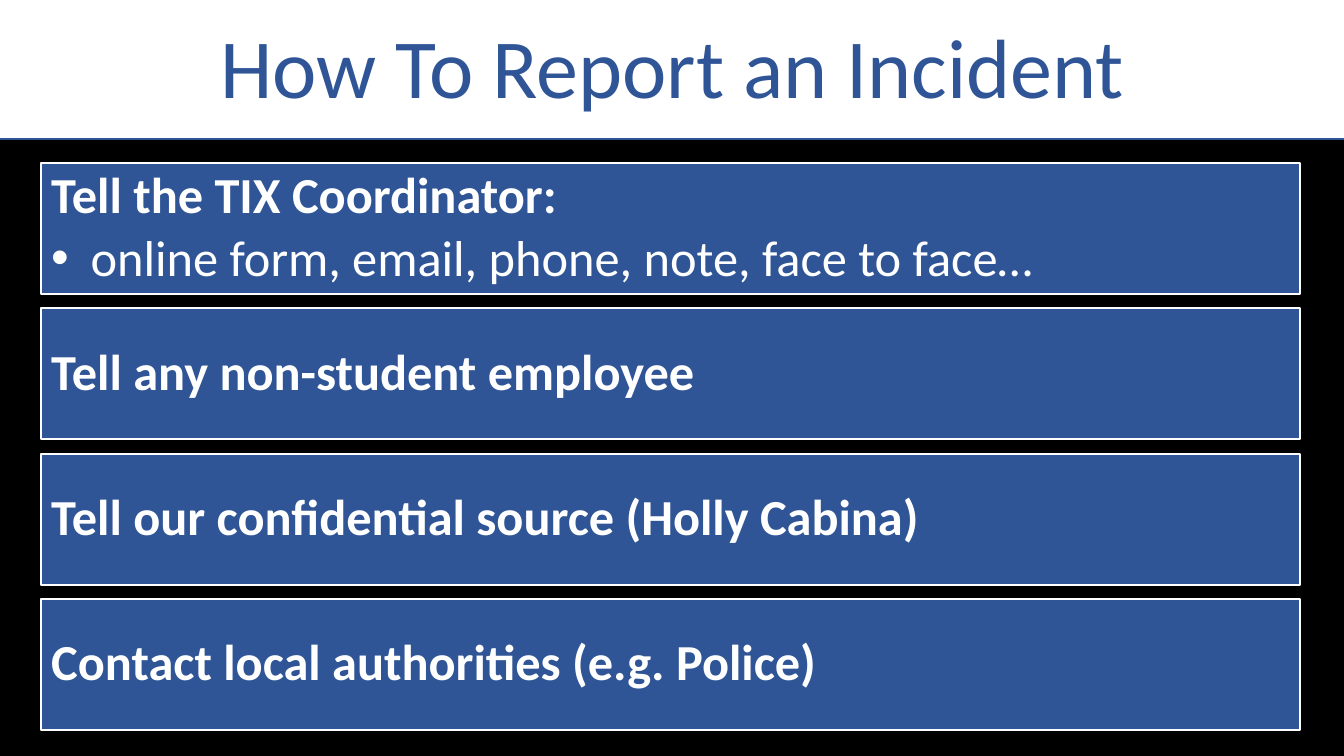
from dataclasses import dataclass

from lxml.etree import SubElement
from pptx import Presentation
from pptx.dml.color import RGBColor
from pptx.enum.shapes import MSO_SHAPE
from pptx.enum.text import MSO_ANCHOR, MSO_AUTO_SIZE, PP_ALIGN
from pptx.oxml.ns import qn
from pptx.util import Inches, Pt


@dataclass(frozen=True)
class Theme:
    font: str = "Calibri"
    black: RGBColor = RGBColor(0, 0, 0)
    white: RGBColor = RGBColor(255, 255, 255)
    blue: RGBColor = RGBColor(0x2F, 0x55, 0x97)
    title_size: int = 60
    body_size: int = 36
    banner_line: float = 1.75
    panel_line: float = 1.5


THEME = Theme()

# Grid, in inches: one column of equal rows
PAGE_WIDTH, PAGE_HEIGHT = 13.33, 7.5
PANEL_LEFT, PANEL_TOP = 0.41, 1.62
PANEL_WIDTH, PANEL_HEIGHT = 12.48, 1.3
ROW_PITCH = 1.44
BULLET_INDENT = 0.39

# Each option: heading, details
OPTIONS = [
    ("Tell the TIX Coordinator:", ["online form, email, phone, note, face to face…"]),
    ("Tell any non-student employee", []),
    ("Tell our confidential source (Holly Cabina)", []),
    ("Contact local authorities (e.g. Police)", []),
]


def add_block(page, left, top, width, height, fill, line, line_width):
    block = page.shapes.add_shape(
        MSO_SHAPE.RECTANGLE, Inches(left), Inches(top), Inches(width), Inches(height))
    block.shadow.inherit = False
    block.fill.solid()
    block.fill.fore_color.rgb = fill
    block.line.color.rgb = line
    block.line.width = Pt(line_width)
    return block


def format_para(para, size, color, bold=False, align=PP_ALIGN.LEFT, space_after=0):
    para.alignment = align
    para.line_spacing = 0.9
    para.space_after = Pt(space_after)
    for span in para.runs:
        span.font.name = THEME.font
        span.font.size = Pt(size)
        span.font.bold = bold
        span.font.color.rgb = color


def add_bullet(para):
    properties = para._p.get_or_add_pPr()
    indent = Inches(BULLET_INDENT)
    properties.set("marL", str(indent))
    properties.set("indent", str(-indent))
    SubElement(properties, qn("a:buFont"), typeface="Arial")
    SubElement(properties, qn("a:buChar"), char="•")


def add_title(page, text):
    title = page.shapes.title
    title.left, title.top = Inches(0.92), Inches(0.4)
    title.width, title.height = Inches(11.5), Inches(0.62)
    frame = title.text_frame
    frame.text = text
    frame.word_wrap = True
    frame.auto_size = MSO_AUTO_SIZE.NONE
    frame.vertical_anchor = MSO_ANCHOR.MIDDLE
    format_para(frame.paragraphs[0], THEME.title_size, THEME.blue, align=PP_ALIGN.CENTER)

    # White banner behind the title, bleeding off the page on three sides
    banner = add_block(page, -0.13, -0.14, PAGE_WIDTH + 0.26, 1.52,
                       THEME.white, THEME.blue, THEME.banner_line)
    title.element.addprevious(banner.element)


def add_option(page, row, heading, details):
    panel = add_block(page, PANEL_LEFT, PANEL_TOP + row * ROW_PITCH, PANEL_WIDTH,
                      PANEL_HEIGHT, THEME.blue, THEME.white, THEME.panel_line)
    frame = panel.text_frame
    frame.text = "\n".join([heading, *details])
    frame.word_wrap = True
    frame.vertical_anchor = MSO_ANCHOR.MIDDLE
    space_after = 6 if details else 12
    for index, para in enumerate(frame.paragraphs):
        format_para(para, THEME.body_size, THEME.white,
                    bold=index == 0, space_after=space_after)
        if index > 0:
            add_bullet(para)


def main():
    deck = Presentation()
    deck.slide_width, deck.slide_height = Inches(PAGE_WIDTH), Inches(PAGE_HEIGHT)
    page = deck.slides.add_slide(deck.slide_layouts.get_by_name("Title Only"))
    page.background.fill.solid()
    page.background.fill.fore_color.rgb = THEME.black

    add_title(page, "How To Report an Incident")
    for row, (heading, details) in enumerate(OPTIONS):
        add_option(page, row, heading, details)
    deck.save("out.pptx")


if __name__ == "__main__":
    main()
